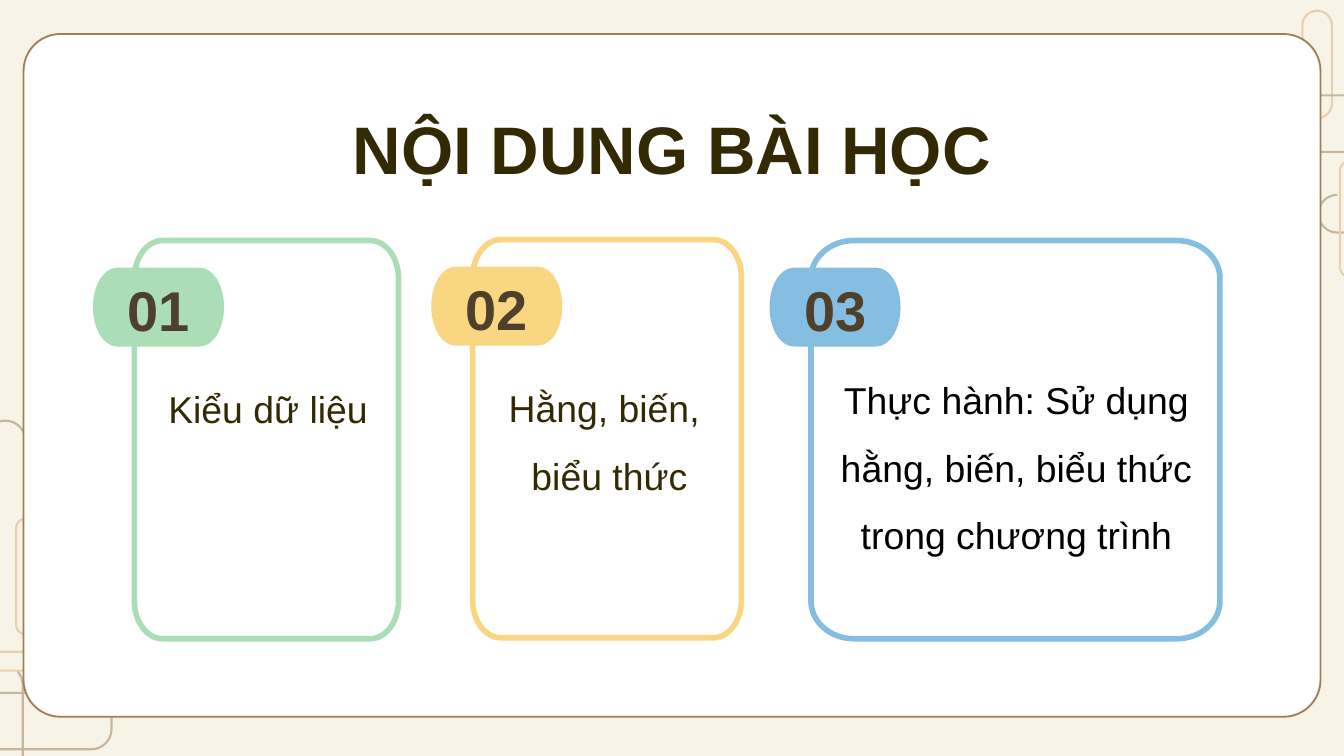
import lxml.etree
import pptx
import pptx.dml.color
import pptx.enum.shapes
import pptx.enum.text
import pptx.oxml.ns
import pptx.util

# The slide is a square grid: 100 columns wide, 56.25 rows high
COLUMNS, ROWS = 100, 56.25
CELL = pptx.util.Inches(0.1)
FONT = "Arial"
COLORS = {
    "cream": "F7F4E7", "white": "FFFFFF", "brown": "9E7F56", "tan": "E2AE74",
    "title": "332A03", "number": "4F402B", "black": "000000",
    "green": "ABDEB6", "yellow": "F8D682", "blue": "86BEE1",
}
# Each corner, clockwise: its place in the box, then the way in and the way out
CORNERS = {
    "tl": ((0, 0), (0, 1), (1, 0)), "tr": ((1, 0), (-1, 0), (0, 1)),
    "br": ((1, 1), (0, -1), (-1, 0)), "bl": ((0, 1), (1, 0), (0, -1)),
}
ALL_CORNERS = ("tr", "br", "bl", "tl")
BEND = 0.45  # distance of a curve's control points from the corner, in radii

# Loops behind the panel: colour, (left, top, width, height), radius;
# open ones add the corners passed clockwise, and the points before and after
LOOPS = [
    ("brown", (98.1, 14.5, 10.7, 2.8), 1.4, ALL_CORNERS, [(101.2, 14.5)]),
    ("tan", (99.7, 12, 1.4, 8.6), 0.7),
    ("tan", (96.9, 0.8, 2.2, 8), 1.1, ("tl", "tr", "br", "bl"), [(96.9, 4.8)], [(96.9, 7.1)]),
    ("brown", (95.7, 7.1, 12.6, 4.2), 1.5),
    ("tan", (96.8, 12.8, 1.3, 5.4), 0.65, ("br", "bl", "tl", "tr"),
     [(98.1, 16.3)], [(98.1, 15.4)]),
    ("brown", (-4.3, 51.55, 12.6, 4.2), 1.5),
    ("brown", (-1.3, 49.9, 3, 13.1), 1.5, ("br", "bl"),
     [(1.3, 49.9), (1.6, 50.4), (1.7, 50.9)], [(-1.3, 55.7)]),
    ("tan", (-4.1, 48.5, 8.6, 1.4), 0.7),
    ("brown", (-1.1, 31.3, 3, 13.2), 1.5, ("tl", "tr"),
     [(-0.7, 44.5), (-1, 44), (-1.1, 43.5)], [(1.9, 38.6)]),
    ("tan", (1.2, 38.6, 1.4, 8.6), 0.7),
]

# Cards: colour, top, width, corner radius, text top, text (left, width), text colour, lines
CARDS = [
    ("green", 17.9, 19.65, 2.1, 26.6, (10.2, 19.5), "title", ["Kiểu dữ liệu"]),
    ("yellow", 17.83, 20, 2.1, 26.53, (35.5, 19.7), "title", ["Hằng, biến, ", "biểu thức"]),
    ("blue", 17.9, 30.43, 3.2, 25.93, (60.84, 29.6), "black",
     ["Thực hành: Sử dụng hằng, biến, biểu thức trong chương trình"]),
]
CARD_LEFT, CARD_PITCH, CARD_HEIGHT = 10, 25.17, 29.63


def grid(*cells):
    return [round(value * CELL) for value in cells]


def rgb(name):
    return pptx.dml.color.RGBColor.from_string(COLORS[name])


def paint(shape, fill=None, line=None, width=1):
    shape.shadow.inherit = False
    if fill:
        shape.fill.solid()
        shape.fill.fore_color.rgb = rgb(fill)
    else:
        shape.fill.background()
    if line:
        shape.line.color.rgb = rgb(line)
        shape.line.width = pptx.util.Pt(width)
    else:
        shape.line.fill.background()


def corner_points(box, radius_x, radius_y, corner):
    """Entry, two control points and exit of one rounded corner."""
    left, top, width, height = box
    (right_side, bottom_side), entry, leave = CORNERS[corner]
    x, y = left + width * right_side, top + height * bottom_side
    steps = [(entry, 1), (entry, BEND), (leave, BEND), (leave, 1)]
    return [(x + radius_x * way[0] * share, y + radius_y * way[1] * share)
            for way, share in steps]


def bend(segments):
    """Turn three straight segments into one curve with their points."""
    curve = lxml.etree.Element(pptx.oxml.ns.qn("a:cubicBezTo"))
    segments[0].addprevious(curve)
    for segment in segments:
        curve.append(segment[0])
        segment.getparent().remove(segment)


def add_outline(page, box, radius_x, radius_y, corners=ALL_CORNERS, before=(), after=()):
    rounded = [point for corner in corners
               for point in corner_points(box, radius_x, radius_y, corner)]
    lead = list(before) or [rounded[-1]]
    start, *rest = [grid(*point) for point in [*lead, *rounded, *after]]
    builder = page.shapes.build_freeform(*start)
    builder.add_line_segments(rest, close=not before)
    shape = builder.convert_to_shape()
    segments = list(shape.element.iter(pptx.oxml.ns.qn("a:lnTo")))
    for number in range(len(corners)):
        first = len(lead) + 4 * number
        bend(segments[first:first + 3])
    return shape


def add_loop(page, color, box, radius, *opening):
    paint(add_outline(page, box, radius, radius, *opening), line=color, width=1.12)


def write(frame, lines, size, color, bold=False, spacing=1.5):
    frame.word_wrap = True
    frame.text = "\n".join(lines)
    for para in frame.paragraphs:
        para.alignment = pptx.enum.text.PP_ALIGN.CENTER
        para.line_spacing = spacing
        para.font.name = FONT
        para.font.size = pptx.util.Pt(size)
        para.font.bold = bold
        para.font.color.rgb = rgb(color)


def set_margins(frame, margin):
    frame.margin_left = frame.margin_right = margin
    frame.margin_top = frame.margin_bottom = margin


def add_backdrop(page):
    page.background.fill.solid()
    page.background.fill.fore_color.rgb = rgb("cream")
    for loop in LOOPS:
        add_loop(page, *loop)

    # Translucent veil that softens the loops
    kinds = pptx.enum.shapes.MSO_SHAPE
    veil = page.shapes.add_shape(kinds.RECTANGLE, *grid(0, 0, COLUMNS, ROWS))
    paint(veil, "cream")
    color = veil.element.find(".//" + pptx.oxml.ns.qn("a:srgbClr"))
    lxml.etree.SubElement(color, pptx.oxml.ns.qn("a:alpha"), val="47000")

    # White panel
    panel = page.shapes.add_shape(kinds.ROUNDED_RECTANGLE, *grid(1.75, 2.53, 96.5, 50.8))
    panel.adjustments[0] = 0.054
    paint(panel, "white", "brown")


def place_title(page, text):
    title = page.shapes.title
    title.left, title.top, title.width, title.height = grid(0, 6.2, COLUMNS, 6.5)
    page.shapes.element.append(title.element)  # bring in front of the panel
    frame = title.text_frame
    write(frame, [text], 36, "title", bold=True)
    set_margins(frame, CELL)
    frame.auto_size = pptx.enum.text.MSO_AUTO_SIZE.NONE
    frame.vertical_anchor = pptx.enum.text.MSO_ANCHOR.MIDDLE


def add_card(page, index, color, top, width, radius, text_top, text_span, text_color, lines):
    left = CARD_LEFT + index * CARD_PITCH
    frame = add_outline(page, (left, top, width, CARD_HEIGHT), radius, 2.8)
    paint(frame, "white", color, 3)

    # Number badge
    badge_left, badge_top = left - 2.87, top + 2.23
    badge = add_outline(page, (badge_left, badge_top, 9.33, 5.45), 1.6, 2.72)
    paint(badge, color, color, 3)
    number = page.shapes.add_textbox(*grid(badge_left + 0.32, badge_top, 8.7, 5.1))
    set_margins(number.text_frame, 0)
    write(number.text_frame, [f"{index + 1:02}"], 30, "number", True, pptx.util.Pt(38.9))

    # Topic
    text_left, text_width = text_span
    text_height = 15.5 if index == 2 else 1.5 + 4.8 * len(lines)
    topic = page.shapes.add_textbox(*grid(text_left, text_top, text_width, text_height))
    write(topic.text_frame, lines, 20, text_color)
    topic.text_frame.auto_size = pptx.enum.text.MSO_AUTO_SIZE.SHAPE_TO_FIT_TEXT


def main():
    deck = pptx.Presentation()
    deck.slide_width, deck.slide_height = grid(COLUMNS, ROWS)
    page = deck.slides.add_slide(deck.slide_layouts.get_by_name("Title Only"))
    add_backdrop(page)
    place_title(page, "NỘI DUNG BÀI HỌC")
    for index, card in enumerate(CARDS):
        add_card(page, index, *card)
    deck.save("out.pptx")


if __name__ == "__main__":
    main()
